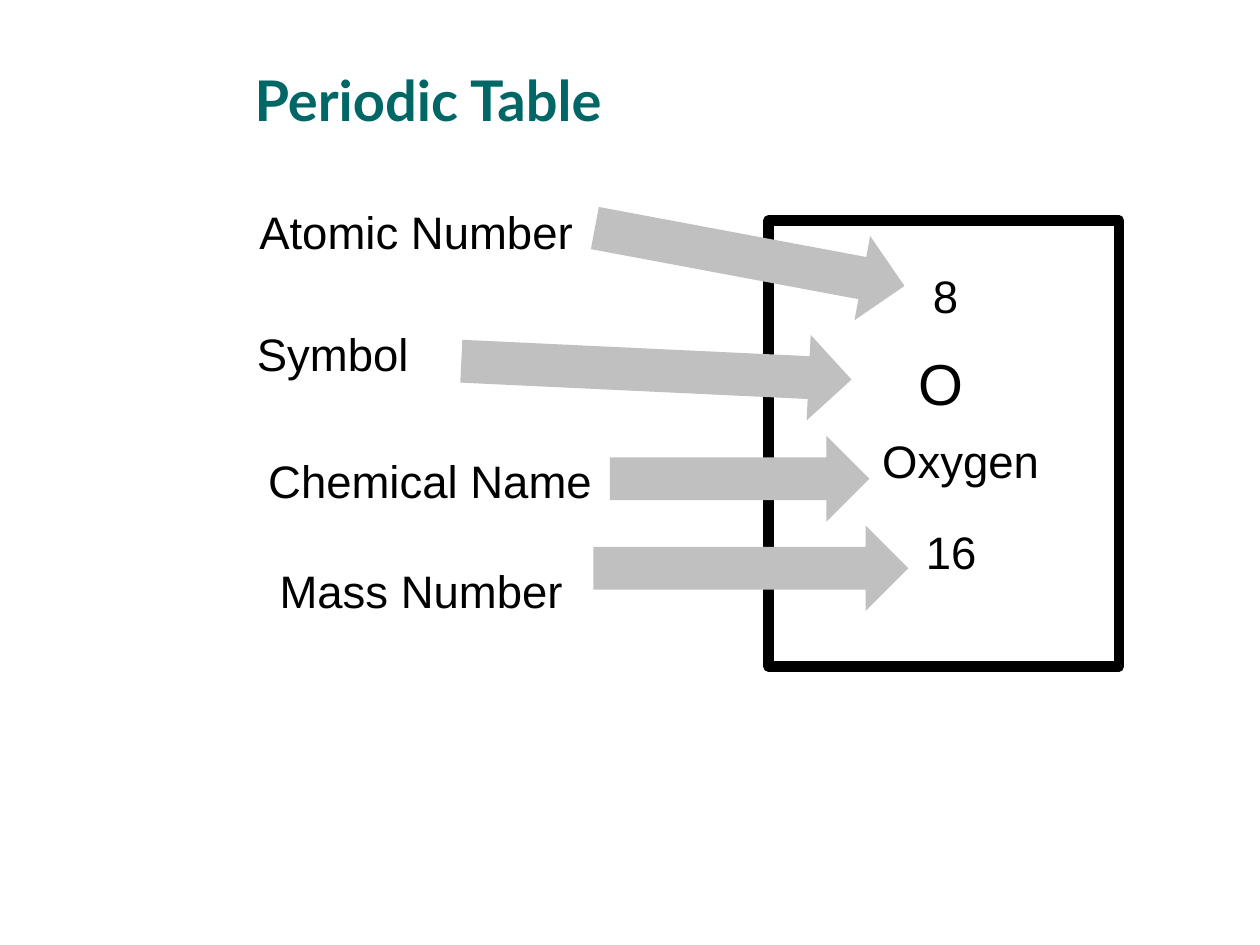
from dataclasses import dataclass

from pptx import Presentation
from pptx.dml.color import RGBColor
from pptx.enum import shapes, text
from pptx.util import Inches, Pt


@dataclass(frozen=True)
class Theme:
    title_font: str = "Lato"
    body_font: str = "Arial"
    title: RGBColor = RGBColor(0x00, 0x66, 0x66)
    ink: RGBColor = RGBColor(0x00, 0x00, 0x00)
    arrow: RGBColor = RGBColor(0xC0, 0xC0, 0xC0)
    title_size: int = 32
    body_size: int = 26
    symbol_size: int = 33
    frame_width: int = 6


THEME = Theme()
LEFT, CENTER = text.PP_ALIGN.LEFT, text.PP_ALIGN.CENTER


def place(x, y, w, h):
    return Inches(x), Inches(y), Inches(w), Inches(h)


def style(p, font, size, color, align=LEFT, bold=False):
    p.alignment = align
    p.font.name = font
    p.font.size = Pt(size)
    p.font.bold = bold
    p.font.color.rgb = color


def add_title(s, box, words):
    sp = s.shapes.title
    sp.left, sp.top, sp.width, sp.height = place(*box)
    tf = sp.text_frame
    tf.text = words
    tf.vertical_anchor = text.MSO_ANCHOR.MIDDLE
    style(tf.paragraphs[0], THEME.title_font, THEME.title_size, THEME.title, bold=True)


def add_label(s, box, words, size=THEME.body_size, align=LEFT):
    tf = s.shapes.add_textbox(*place(*box)).text_frame
    tf.word_wrap = True
    tf.auto_size = text.MSO_AUTO_SIZE.SHAPE_TO_FIT_TEXT
    p = tf.paragraphs[0]
    p.text = words
    p.line_spacing = 0.8
    style(p, THEME.body_font, size, THEME.ink, align)


def add_element_card(s, box):
    """Draw the framed periodic-table entry for oxygen."""
    left, top = box[:2]
    frame = s.shapes.add_shape(shapes.MSO_SHAPE.RECTANGLE, *place(*box))
    frame.shadow.inherit = False
    frame.fill.background()
    frame.line.color.rgb = THEME.ink
    frame.line.width = Pt(THEME.frame_width)
    entries = [
        ("8", 1.08, 0.41, 0.65, 0.45, THEME.body_size, CENTER),
        ("O", 0.96, 1.07, 0.81, 0.55, THEME.symbol_size, CENTER),
        ("Oxygen", 0.65, 1.72, 1.75, 0.45, THEME.body_size, CENTER),
        ("16", 1.15, 2.44, 0.85, 0.45, THEME.body_size, LEFT),
    ]
    for words, dx, dy, w, h, size, align in entries:
        add_label(s, (left + dx, top + dy, w, h), words, size, align)


def add_captions(s, box):
    left, top, width, _ = box
    captions = [
        ("Atomic Number", 0.02, 0),
        ("Symbol", 0, 0.97),
        ("Chemical Name", 0.09, 1.98),
        ("Mass Number", 0.18, 2.85),
    ]
    for words, dx, dy in captions:
        add_label(s, (left + dx, top + dy, width, 0.45), words)


def add_arrows(s, box):
    """Point from each caption to its entry on the card."""
    left, top = box[:2]
    arrows = [
        (1.04, 0, 2.5, 10.6),
        (0, 0.9, 3.1, 2.7),
        (1.18, 1.76, 2.06, 0),
        (1.05, 2.47, 2.5, 0),
    ]
    for dx, dy, length, angle in arrows:
        sp = s.shapes.add_shape(shapes.MSO_SHAPE.RIGHT_ARROW,
                                *place(left + dx, top + dy, length, 0.68))
        sp.rotation = angle
        sp.shadow.inherit = False
        sp.fill.solid()
        sp.fill.fore_color.rgb = THEME.arrow
        sp.line.fill.background()


def main():
    prs = Presentation()
    prs.slide_width, prs.slide_height = Inches(10), Inches(7.5)
    s = prs.slides.add_slide(prs.slide_layouts.get_by_name("Title Only"))
    add_title(s, (1.92, 0.33, 7.67, 0.92), "Periodic Table")
    add_element_card(s, (6.1, 1.75, 2.78, 3.54))
    add_captions(s, (1.94, 1.65, 3.18, 3.3))
    add_arrows(s, (3.66, 1.7, 3.55, 3.15))
    prs.save("out.pptx")


if __name__ == "__main__":
    main()
